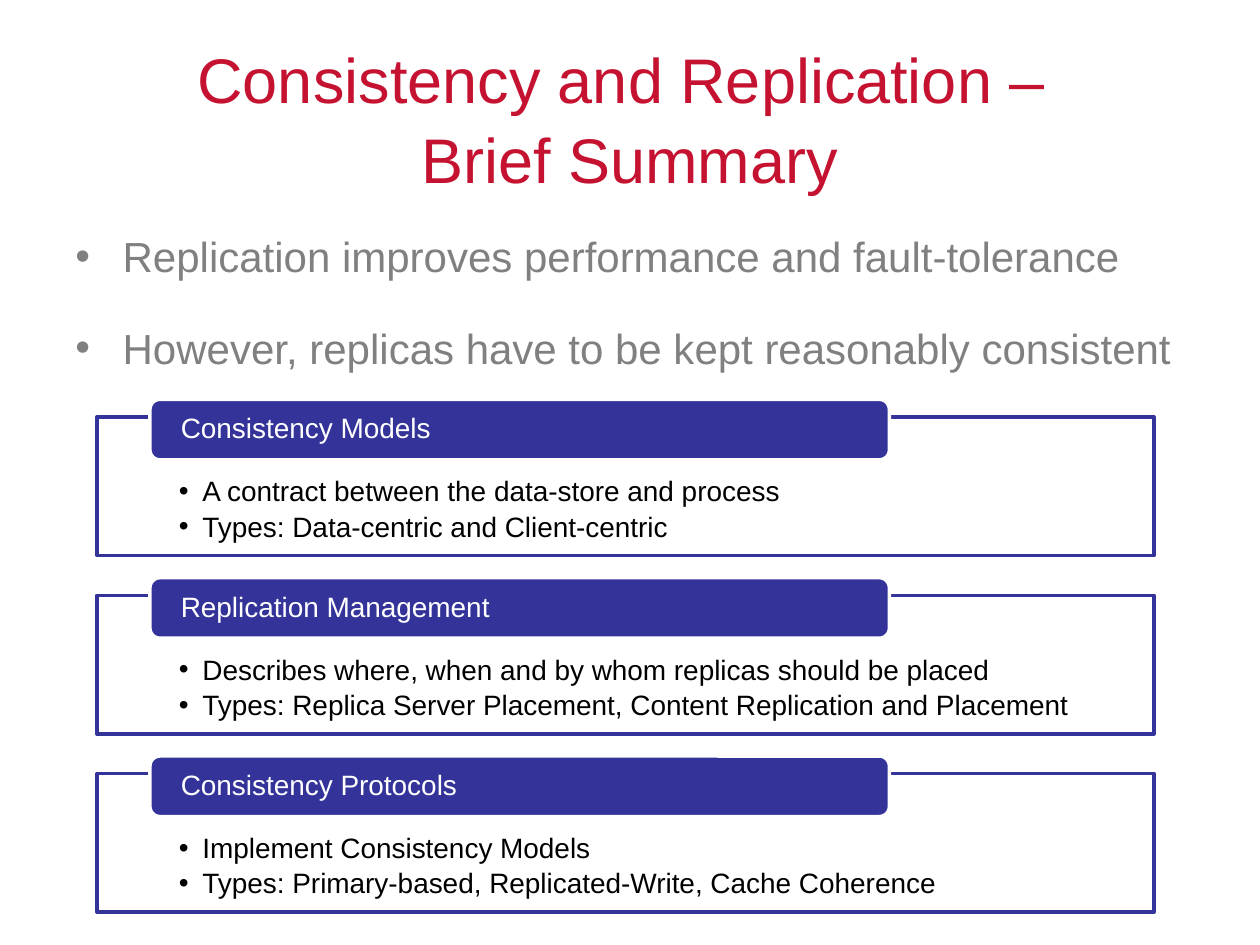
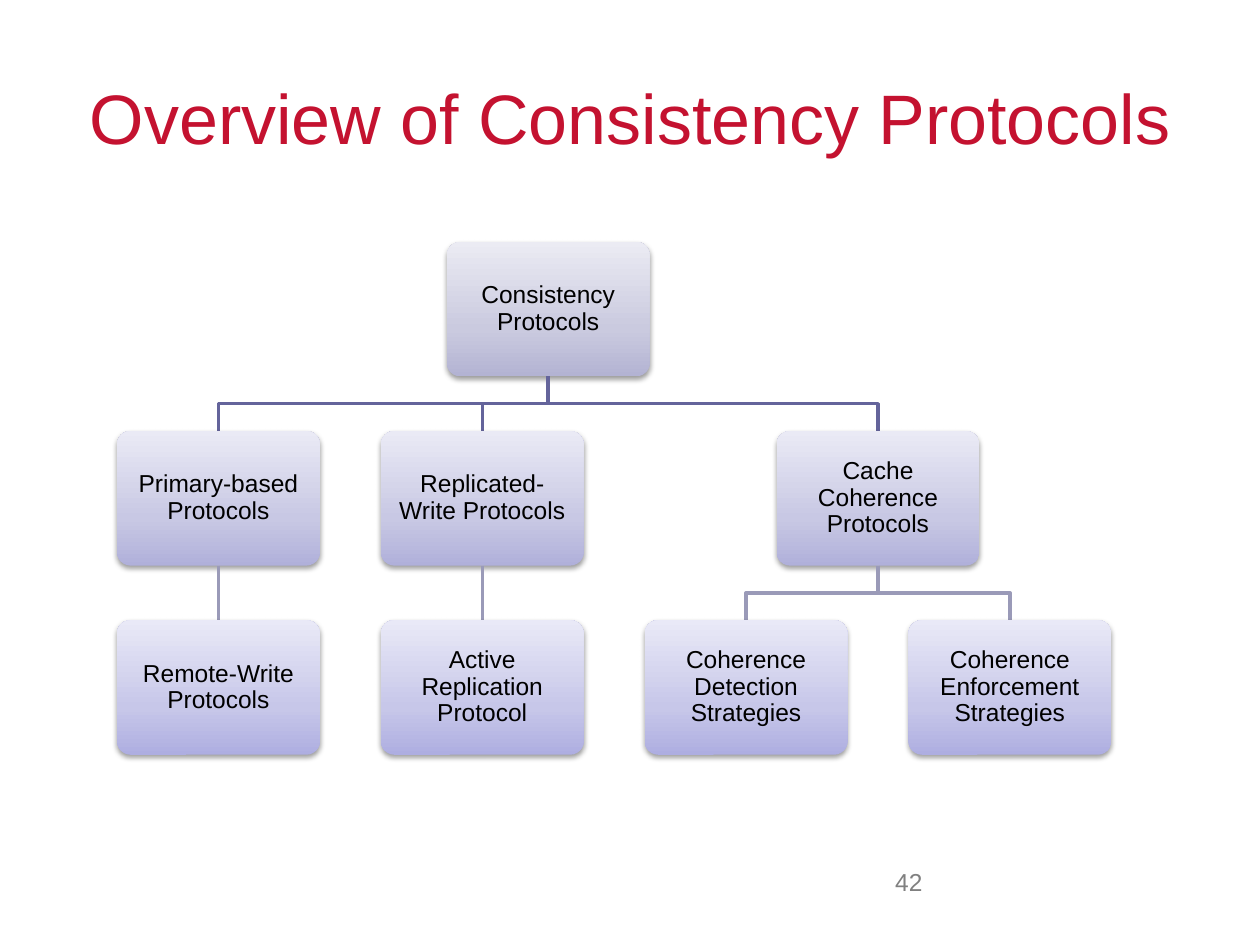
"""Build two slides on consistency and replication."""
from pptx import Presentation
from pptx.dml.color import RGBColor
from pptx.enum.shapes import MSO_CONNECTOR, MSO_SHAPE
from pptx.enum.text import MSO_ANCHOR, PP_ALIGN
from pptx.oxml import parse_xml
from pptx.oxml.ns import nsdecls
from pptx.util import Pt

HUES = {
    "title": "C41230", "grey": "808080", "blue": "333399",
    "white": "FFFFFF", "black": "000000", "trunk": "64649B", "branch": "9A9AB8",
}
FADES = [
    ("B3B3D3", "CACADF", "EBEBF3"),
    ("B0B0DA", "C8C8E4", "EAEAF5"),
    ("AEAEE1", "C7C7E9", "E9E9F7"),
]
STOPS = (0, 35000, 100000)
FONT = "Arial"

PARTS = [
    ("Consistency Models",
     ["A contract between the data-store and process",
      "Types: Data-centric and Client-centric"]),
    ("Replication Management",
     ["Describes where, when and by whom replicas should be placed",
      "Types: Replica Server Placement, Content Replication and Placement"]),
    ("Consistency Protocols",
     ["Implement Consistency Models",
      "Types: Primary-based, Replicated-Write, Cache Coherence"]),
]
TREE = [
    ("Consistency Protocols", 1.25, 0, None),
    ("Primary-based Protocols", 0, 1, 1.25),
    ("Replicated-Write Protocols", 1, 1, 1.25),
    ("Cache Coherence Protocols", 2.5, 1, 1.25),
    ("Remote-Write Protocols", 0, 2, 0),
    ("Active Replication Protocol", 1, 2, 1),
    ("Coherence Detection Strategies", 2, 2, 2.5),
    ("Coherence Enforcement Strategies", 3, 2, 2.5),
]
NODE_W, NODE_H = 115.9, 76.9
COL_GAP, ROW_GAP = 150.75, 108.1
TREE_X, TREE_Y = 66.9, 138.2


def color(name):
    return RGBColor.from_string(HUES[name])


def write(frame, text, size=16, hue="black", align=PP_ALIGN.LEFT,
          anchor=MSO_ANCHOR.TOP, inset=(7.2, 3.6), indent=0, lead=1.0,
          gap=0):
    frame.word_wrap = True
    frame.vertical_anchor = anchor
    frame.margin_left = frame.margin_right = Pt(inset[0])
    frame.margin_top = frame.margin_bottom = Pt(inset[1])
    for i, line in enumerate([text] if isinstance(text, str) else text):
        para = frame.add_paragraph() if i else frame.paragraphs[0]
        para.text = line
        if indent:
            props = para._p.get_or_add_pPr()
            props.set("marL", str(Pt(indent)))
            props.set("indent", str(-Pt(indent)))
            props.append(parse_xml(f'<a:buFont {nsdecls("a")} typeface="{FONT}"/>'))
            props.append(parse_xml(f'<a:buChar {nsdecls("a")} char="•"/>'))
        para.alignment = align
        para.line_spacing = lead
        if i:
            para.space_before = Pt(gap)
        for run in para.runs:
            run.font.name = FONT
            run.font.size = Pt(size)
            run.font.color.rgb = color(hue)


class Deck:
    def __init__(self):
        self.show = Presentation()
        self.show.slide_width, self.show.slide_height = Pt(720), Pt(540)
        self.slide = None

    def start(self, title, **style):
        self.slide = self.show.slides.add_slide(self.show.slide_layouts[6])
        self.text(title, 36, 21.6, 648, 90, hue="title",
                  align=PP_ALIGN.CENTER, anchor=MSO_ANCHOR.MIDDLE, **style)

    def text(self, text, x, y, w, h, **style):
        box = self.slide.shapes.add_textbox(Pt(x), Pt(y), Pt(w), Pt(h))
        write(box.text_frame, text, **style)

    def box(self, kind, x, y, w, h, fill, line):
        box = self.slide.shapes.add_shape(kind, Pt(x), Pt(y), Pt(w), Pt(h))
        box.shadow.inherit = False
        box.fill.solid()
        box.fill.fore_color.rgb = color(fill)
        self.ink(box, line)
        return box

    def ink(self, shape, hue):
        shape.line.color.rgb = color(hue)
        shape.line.width = Pt(2)

    def panel(self, head, notes, y):
        body = self.box(MSO_SHAPE.RECTANGLE, 55.4, y, 604, 79.2, "white", "blue")
        write(body.text_frame, notes, inset=(46.8, 34.6), indent=13.5,
              lead=0.9, gap=3)
        tab = self.box(MSO_SHAPE.ROUNDED_RECTANGLE, 85.7, y - 10.1, 422.6, 34.6,
                       "blue", "white")
        write(tab.text_frame, head, hue="white", anchor=MSO_ANCHOR.MIDDLE,
              inset=(16, 0), lead=0.9)

    def node(self, text, col, row):
        node = self.slide.shapes.add_shape(
            MSO_SHAPE.ROUNDED_RECTANGLE, Pt(TREE_X + col * COL_GAP),
            Pt(TREE_Y + row * ROW_GAP), Pt(NODE_W), Pt(NODE_H))
        node.adjustments[0] = 0.1
        stops = "".join(
            f'<a:gs pos="{pos}"><a:srgbClr val="{hue}"/></a:gs>'
            for pos, hue in zip(STOPS, FADES[row]))
        props = node._element.spPr
        props.append(parse_xml(
            f'<a:gradFill {nsdecls("a")} rotWithShape="1"><a:gsLst>{stops}</a:gsLst>'
            '<a:lin ang="16200000" scaled="0"/></a:gradFill>'))
        node.line.fill.background()
        props.append(parse_xml(
            f'<a:effectLst {nsdecls("a")}><a:outerShdw blurRad="{Pt(3.1)}" '
            f'dist="{Pt(1.6)}" dir="5400000" rotWithShape="0">'
            f'<a:srgbClr val="{HUES["black"]}"><a:alpha val="38000"/></a:srgbClr>'
            '</a:outerShdw></a:effectLst>'))
        write(node.text_frame, text, size=14, align=PP_ALIGN.CENTER,
              anchor=MSO_ANCHOR.MIDDLE, inset=(4.3, 4.3), lead=0.9)

    def link(self, start, end, row):
        x1, x2 = (Pt(TREE_X + col * COL_GAP + NODE_W / 2) for col in (start, end))
        y2 = Pt(TREE_Y + row * ROW_GAP)
        y1 = y2 - Pt(ROW_GAP - NODE_H)
        if x1 == x2:
            line = self.slide.shapes.add_connector(
                MSO_CONNECTOR.STRAIGHT, x1, y1, x2, y2)
            line._element.spPr.append(parse_xml(f'<a:effectLst {nsdecls("a")}/>'))
        else:
            mid = (y1 + y2) // 2
            path = self.slide.shapes.build_freeform(x1, y1)
            path.add_line_segments([(x1, mid), (x2, mid), (x2, y2)], close=False)
            line = path.convert_to_shape()
            line.fill.background()
            line.shadow.inherit = False
        self.ink(line, "trunk" if row == 1 else "branch")

    def page(self, number):
        self.text(number, 468, 491.8, 66.2, 37.4, size=14, hue="grey",
                  align=PP_ALIGN.RIGHT)


def main():
    deck = Deck()
    deck.start("Consistency and Replication – \nBrief Summary", size=36, lead=1.05)
    deck.text(["Replication improves performance and fault-tolerance",
               "However, replicas have to be kept reasonably consistent"],
              36, 128.4, 684, 90, size=24, hue="grey", indent=27, gap=23.3)
    for i, (head, notes) in enumerate(PARTS):
        deck.panel(head, notes, 238.3 + i * 101.9)

    deck.start("Overview of Consistency Protocols", size=40)
    for text, col, row, root in TREE:
        if root is not None:
            deck.link(root, col, row)
        deck.node(text, col, row)
    deck.page("42")
    deck.show.save("out.pptx")


if __name__ == "__main__":
    main()
